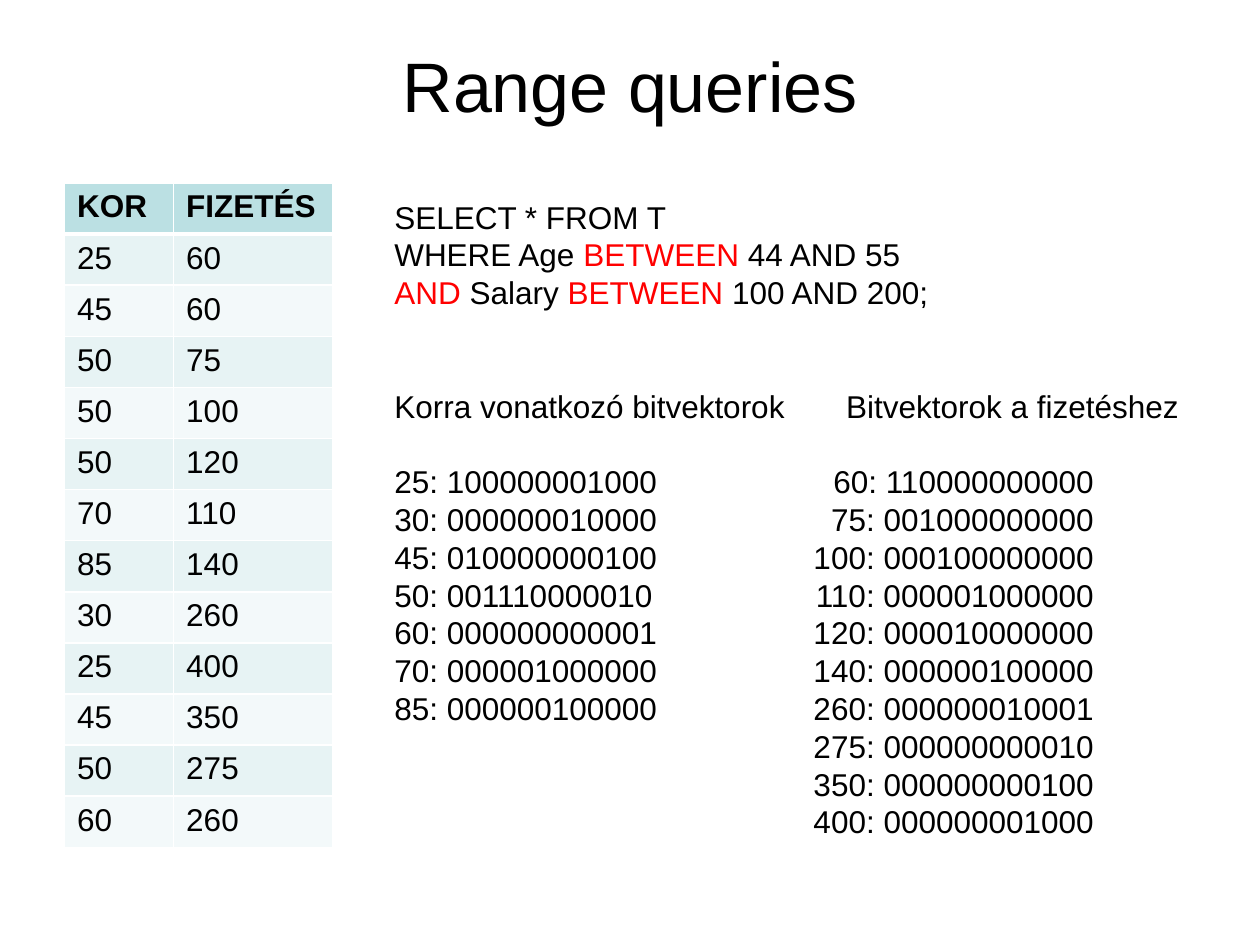
from dataclasses import dataclass

from lxml.etree import SubElement
from pptx import Presentation
from pptx.dml.color import RGBColor as Color
from pptx.enum.text import MSO_ANCHOR as Anchor, PP_ALIGN as Align
from pptx.oxml.ns import qn
from pptx.util import Cm, Pt

TITLE = "Range queries"
TABLE_ROWS = [
    ("KOR", "FIZETÉS"),
    (25, 60), (45, 60), (50, 75), (50, 100), (50, 120), (70, 110),
    (85, 140), (30, 260), (25, 400), (45, 350), (50, 275), (60, 260),
]
# Each query line is a list of (text, is a range keyword).
QUERY = [
    [("SELECT * FROM T", False)],
    [("WHERE Age ", False), ("BETWEEN", True), (" 44 AND 55", False)],
    [("AND ", True), ("Salary ", False), ("BETWEEN", True), (" 100 AND 200;", False)],
]
VECTOR_HEADINGS = ("Korra vonatkozó bitvektorok", "Bitvektorok a fizetéshez")
VECTOR_ROWS = [
    ("25: 100000001000", "60: 110000000000"),
    ("30: 000000010000", "75: 001000000000"),
    ("45: 010000000100", "100: 000100000000"),
    ("50: 001110000010", "110: 000001000000"),
    ("60: 000000000001", "120: 000010000000"),
    ("70: 000001000000", "140: 000000100000"),
    ("85: 000000100000", "260: 000000010001"),
    ("", "275: 000000000010"),
    ("", "350: 000000000100"),
    ("", "400: 000000001000"),
]


@dataclass(frozen=True)
class Theme:
    font: str = "Arial"
    title_size: int = 40
    body_size: int = 18
    line_height: float = 21.6
    text: str = "000000"
    keyword: str = "FF0000"
    header_fill: str = "BBE0E3"
    band_fills: tuple = ("E7F3F4", "F3F9FA")
    border: str = "FFFFFF"


THEME = Theme()
COLUMN_WIDTHS = (2.2, 3.2)
ROW_HEIGHT = 1.03
HEADING_TAB = ("l", 9.11)
VECTOR_TAB = ("r", 14.1)


def add_run(paragraph, text, size=THEME.body_size, color=THEME.text, bold=False):
    run = paragraph.add_run()
    run.text = text
    run.font.name = THEME.font
    run.font.size = Pt(size)
    run.font.bold = bold
    run.font.color.rgb = Color.from_string(color)


def add_text_frame(slide, left, top, width, height, anchor=Anchor.TOP):
    frame = slide.shapes.add_textbox(Cm(left), Cm(top), Cm(width), Cm(height)).text_frame
    frame.word_wrap = True
    frame.vertical_anchor = anchor
    return frame


def add_line(frame, pieces, blank_lines=0, tab=None):
    """Add a paragraph of (text, is keyword) pieces, with a gap above and a tab stop."""
    first = frame.paragraphs[0]
    paragraph = frame.add_paragraph() if first.runs else first
    paragraph.line_spacing = Pt(THEME.line_height)
    paragraph.space_before = Pt(blank_lines * THEME.line_height)
    if tab:
        alignment, position = tab
        tab_list = SubElement(paragraph._p.get_or_add_pPr(), qn("a:tabLst"))
        SubElement(tab_list, qn("a:tab"), pos=str(Cm(position)), algn=alignment)
    for text, is_keyword in pieces:
        add_run(paragraph, text, color=THEME.keyword if is_keyword else THEME.text)


def set_borders(cell, **widths):
    """Draw the four cell borders; widths are points by side letter, 1 if not given."""
    properties = cell._tc.get_or_add_tcPr()
    for index, side in enumerate("LRTB"):
        line = SubElement(properties, qn(f"a:ln{side}"), w=str(Pt(widths.get(side, 1))))
        fill = SubElement(line, qn("a:solidFill"))
        SubElement(fill, qn("a:srgbClr"), val=THEME.border)
        properties.insert(index, line)


def add_data_table(slide, left, top):
    table = slide.shapes.add_table(
        len(TABLE_ROWS), len(COLUMN_WIDTHS), Cm(left), Cm(top),
        Cm(sum(COLUMN_WIDTHS)), Cm(ROW_HEIGHT * len(TABLE_ROWS))).table
    for column, width in zip(table.columns, COLUMN_WIDTHS):
        column.width = Cm(width)
    for index, (row, values) in enumerate(zip(table.rows, TABLE_ROWS)):
        row.height = Cm(ROW_HEIGHT)
        is_header = index == 0
        fill = THEME.header_fill if is_header else THEME.band_fills[(index - 1) % 2]
        for cell, value in zip(row.cells, values):
            add_run(cell.text_frame.paragraphs[0], str(value), bold=is_header)
            cell.fill.solid()
            cell.fill.fore_color.rgb = Color.from_string(fill)
            set_borders(cell, T=3 if index == 1 else 1, B=3 if is_header else 1)


def main():
    presentation = Presentation()
    presentation.slide_width, presentation.slide_height = Cm(25.4), Cm(19.05)
    slide = presentation.slides.add_slide(presentation.slide_layouts[6])

    title = add_text_frame(slide, 1.27, 0.76, 22.86, 1.9, Anchor.MIDDLE).paragraphs[0]
    title.alignment = Align.CENTER
    add_run(title, TITLE, size=THEME.title_size)

    add_data_table(slide, 1.3, 3.69)

    body = add_text_frame(slide, 7.7, 3.86, 17.25, 14.88)
    for pieces in QUERY:
        add_line(body, pieces)
    add_line(body, [("\t".join(VECTOR_HEADINGS), False)], blank_lines=2, tab=HEADING_TAB)
    for index, vectors in enumerate(VECTOR_ROWS):
        add_line(body, [("\t".join(vectors), False)],
                 blank_lines=1 if index == 0 else 0, tab=VECTOR_TAB)

    presentation.save("out.pptx")


if __name__ == "__main__":
    main()
